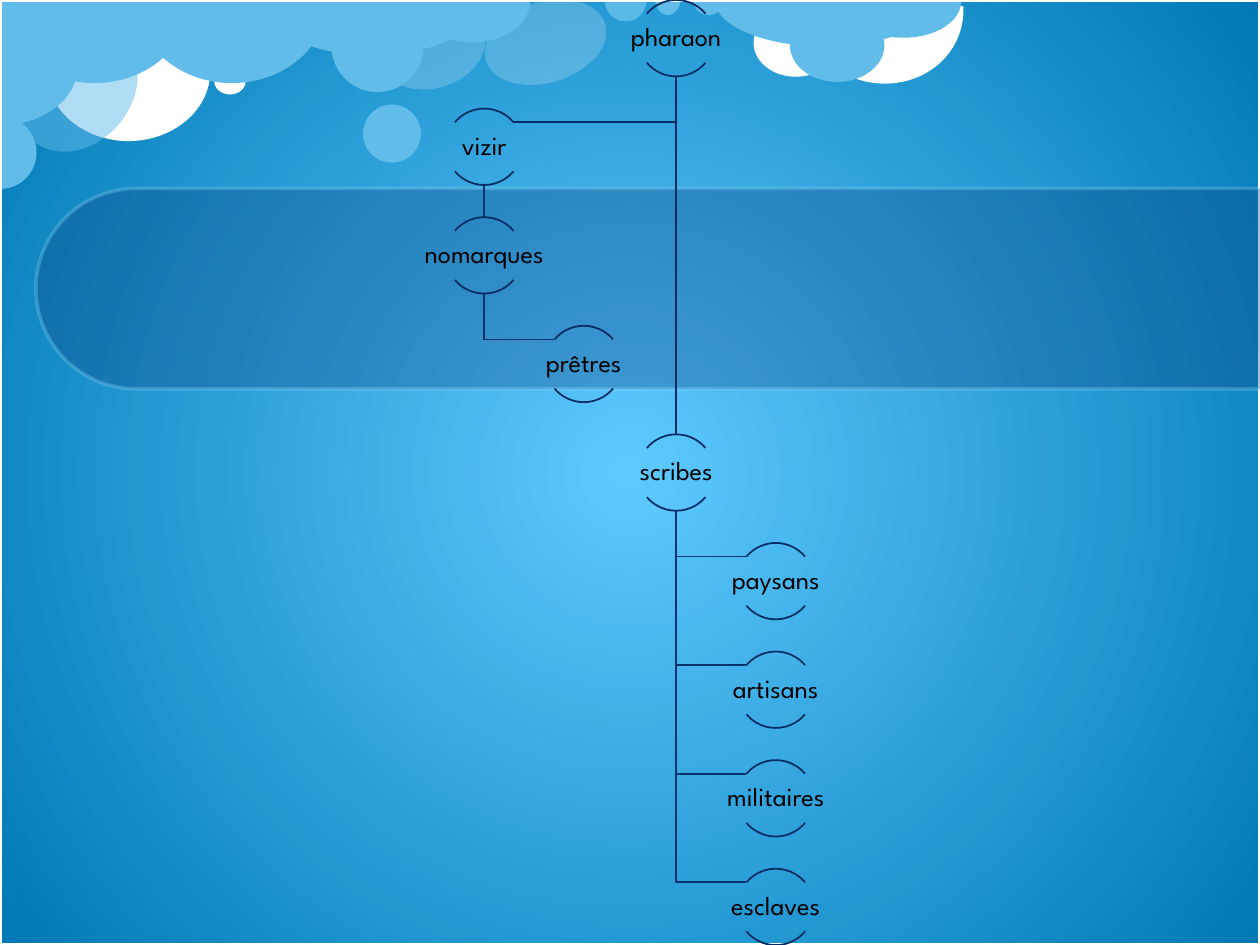
import math

import pptx
import pptx.dml.color
import pptx.enum.shapes
import pptx.enum.text
import pptx.oxml
import pptx.oxml.ns
import pptx.util

Pt = pptx.util.Pt
KIND = pptx.enum.shapes.MSO_SHAPE
WHITE, SKY, PALE, NAVY, INK = "FFFFFF", "62BCE9", "8FD9FB", "062C61", "06326E"
HALF, ARC = (0, 108), (151.8, 44.48)

# left, top, width, height, kind, adjustments, rotation, colour, opacity
CLOUDS = [
    (223.9, -3.6, 46.1, 61.9, KIND.OVAL, (), 72.8, WHITE, 20),
    (26.6, 0.7, 93.6, 79.9, KIND.OVAL, (), 0, WHITE, 100),
    (460.1, -43.2, 87.1, 94.3, KIND.ARC, ARC, 106.5, WHITE, 100),
    (430.6, 5, 48.2, 38.9, KIND.OVAL, (), 0, WHITE, 100),
    (-0.7, -47.5, 109.4, 95, KIND.PIE, HALF, 0, SKY, 100),
    (149.8, -31.7, 126, 63.4, KIND.PIE, HALF, 0, SKY, 100),
    (207.4, 59.8, 33.1, 33.1, KIND.OVAL, (), 0, SKY, 100),
    (13.7, 13, 61.2, 77, KIND.OVAL, (), 41.8, SKY, 50),
    (-20.9, 66.2, 41.8, 41.8, KIND.PIE, HALF, 270, SKY, 100),
    (122.4, 38.9, 18, 15.1, KIND.OVAL, (), 0, WHITE, 100),
    (77.8, -47.5, 109.4, 95, KIND.PIE, HALF, 0, SKY, 100),
    (408.2, -27.4, 126, 54, KIND.PIE, HALF, 0, SKY, 100),
    (451.4, 5, 54, 41.8, KIND.OVAL, (), 0, SKY, 100),
    (483.1, -20.2, 66.2, 41.8, KIND.PIE, HALF, 0, SKY, 100),
    (288.7, -11.5, 46.1, 71.3, KIND.OVAL, (), 72.8, WHITE, 20),
    (345.6, -11.5, 23.8, 23.8, KIND.PIE, HALF, 0, PALE, 50),
    (374.4, -9.4, 14.4, 18, KIND.PIE, HALF, 0, SKY, 100),
    (396, -9.4, 18, 18, KIND.PIE, HALF, 0, SKY, 100),
    (189.4, 0, 52.6, 52.6, KIND.OVAL, (), 0, SKY, 100),
    (236.9, -23.8, 66.2, 48.2, KIND.PIE, HALF, 0, SKY, 100),
    (-33.8, -6.5, 67, 89.3, KIND.PIE, HALF, 270, SKY, 100),
]

DIAMETER, ROW_STEP = 43.68, 62.05
ARC_REACH = DIAMETER / 2 * math.cos(math.radians(40))
ARC_DROP = DIAMETER / 2 * (1 - math.sin(math.radians(40)))
# name: (centre x, row)
PEOPLE = {
    "pharaon": (386.4, 0), "scribes": (386.4, 4),
    "paysans": (443.3, 5), "artisans": (443.3, 6),
    "militaires": (443.3, 7), "esclaves": (443.3, 8),
    "vizir": (276.7, 1), "nomarques": (276.7, 2), "prêtres": (333.6, 3),
}
LINKS = [
    ("nomarques", "prêtres", INK), ("vizir", "nomarques", INK),
    ("pharaon", "vizir", NAVY), ("scribes", "esclaves", INK),
    ("scribes", "militaires", INK), ("scribes", "artisans", INK),
    ("scribes", "paysans", INK), ("pharaon", "scribes", NAVY),
]


def colour(code):
    return pptx.dml.color.RGBColor.from_string(code)


def set_line(shape, code, width):
    shape.line.color.rgb = colour(code)
    shape.line.width = Pt(width)


def fade(shape, percent):
    """Make the fill and line colours of a shape partly transparent."""
    for tint in shape._element.spPr.iter(pptx.oxml.ns.qn("a:srgbClr")):
        alpha = tint.makeelement(pptx.oxml.ns.qn("a:alpha"), {"val": str(percent * 1000)})
        tint.append(alpha)


def add_preset(slide, kind, frame, adjustments=(), fill=None, line=None, width=1):
    shape = slide.shapes.add_shape(kind, *map(Pt, frame))
    shape.shadow.inherit = False
    for index, value in enumerate(adjustments):
        shape.adjustments[index] = value
    if fill:
        shape.fill.solid()
        shape.fill.fore_color.rgb = colour(fill)
    else:
        shape.fill.background()
    if line:
        set_line(shape, line, width)
    else:
        shape.line.fill.background()
    return shape


def paint_background(slide):
    fill = slide.background.fill
    fill.gradient()
    for stop, code, position in zip(fill.gradient_stops, ("5DC9FF", "0079B5"), (0, 1)):
        stop.color.rgb = colour(code)
        stop.position = position
    linear = next(slide._element.iter(pptx.oxml.ns.qn("a:lin")))
    circle = pptx.oxml.parse_xml(
        f'<a:path {pptx.oxml.ns.nsdecls("a")} path="circle">'
        '<a:fillToRect l="50000" t="50000" r="50000" b="50000"/></a:path>')
    linear.getparent().replace(linear, circle)


def add_clouds(slide):
    for *frame, kind, adjustments, rotation, code, opacity in CLOUDS:
        cloud = add_preset(slide, kind, frame, adjustments, fill=code)
        cloud.rotation = rotation
        if opacity < 100:
            fade(cloud, opacity)


def add_band(slide):
    band = add_preset(slide, KIND.ROUND_2_SAME_RECTANGLE, (313.2, -185, 114.5, 699.8),
                      (0.5, 0), "073779", PALE, 2)
    band.rotation = 270
    fade(band, 30)


def add_link(slide, parent, child, code):
    """Draw a straight line to a person below, or an elbow to one at the side."""
    (x, row), (child_x, child_row) = PEOPLE[parent], PEOPLE[child]
    top, child_top = row * ROW_STEP + DIAMETER, child_row * ROW_STEP
    if x == child_x:
        link = slide.shapes.add_connector(
            pptx.enum.shapes.MSO_CONNECTOR.STRAIGHT, Pt(x), Pt(top), Pt(x), Pt(child_top))
        effects = link._element.spPr.makeelement(pptx.oxml.ns.qn("a:effectLst"), {})
        set_line(link, code, 1)
        link._element.spPr.append(effects)
        return
    end_x = child_x - math.copysign(ARC_REACH, child_x - x)
    end_y = child_top + ARC_DROP
    builder = slide.shapes.build_freeform(Pt(x), Pt(top))
    builder.add_line_segments([(Pt(x), Pt(end_y)), (Pt(end_x), Pt(end_y))], close=False)
    elbow = builder.convert_to_shape()
    elbow.shadow.inherit = False
    elbow.fill.background()
    set_line(elbow, code, 1)


def add_person(slide, name, x, row):
    """Draw a name between an upper and a lower arc."""
    top = row * ROW_STEP
    for angles in ((132, 192), (24, 84)):
        add_preset(slide, KIND.ARC, (x - DIAMETER / 2, top, DIAMETER, DIAMETER),
                   angles, line=NAVY)
    box = slide.shapes.add_textbox(Pt(x - DIAMETER), Pt(top + ARC_DROP),
                                   Pt(2 * DIAMETER), Pt(DIAMETER - 2 * ARC_DROP))
    frame = box.text_frame
    frame.word_wrap = True
    frame.vertical_anchor = pptx.enum.text.MSO_ANCHOR.MIDDLE
    frame.margin_left = frame.margin_right = Pt(0.75)
    frame.margin_top = frame.margin_bottom = Pt(0.75)
    para = frame.paragraphs[0]
    para.alignment = pptx.enum.text.PP_ALIGN.CENTER
    para.line_spacing = 0.9
    span = para.add_run()
    span.text = name
    span.font.name = "League Spartan"
    span.font.size = Pt(15)
    span.font.color.rgb = colour("000000")


def main():
    deck = pptx.Presentation()
    deck.slide_width, deck.slide_height = Pt(720), Pt(540)
    slide = deck.slides.add_slide(deck.slide_layouts[6])
    paint_background(slide)
    add_clouds(slide)
    add_preset(slide, KIND.RECTANGLE, (0, 0, 720, 540), line=WHITE, width=2)
    add_band(slide)
    for parent, child, code in LINKS:
        add_link(slide, parent, child, code)
    for name, (x, row) in PEOPLE.items():
        add_person(slide, name, x, row)
    deck.save("out.pptx")


if __name__ == "__main__":
    main()
